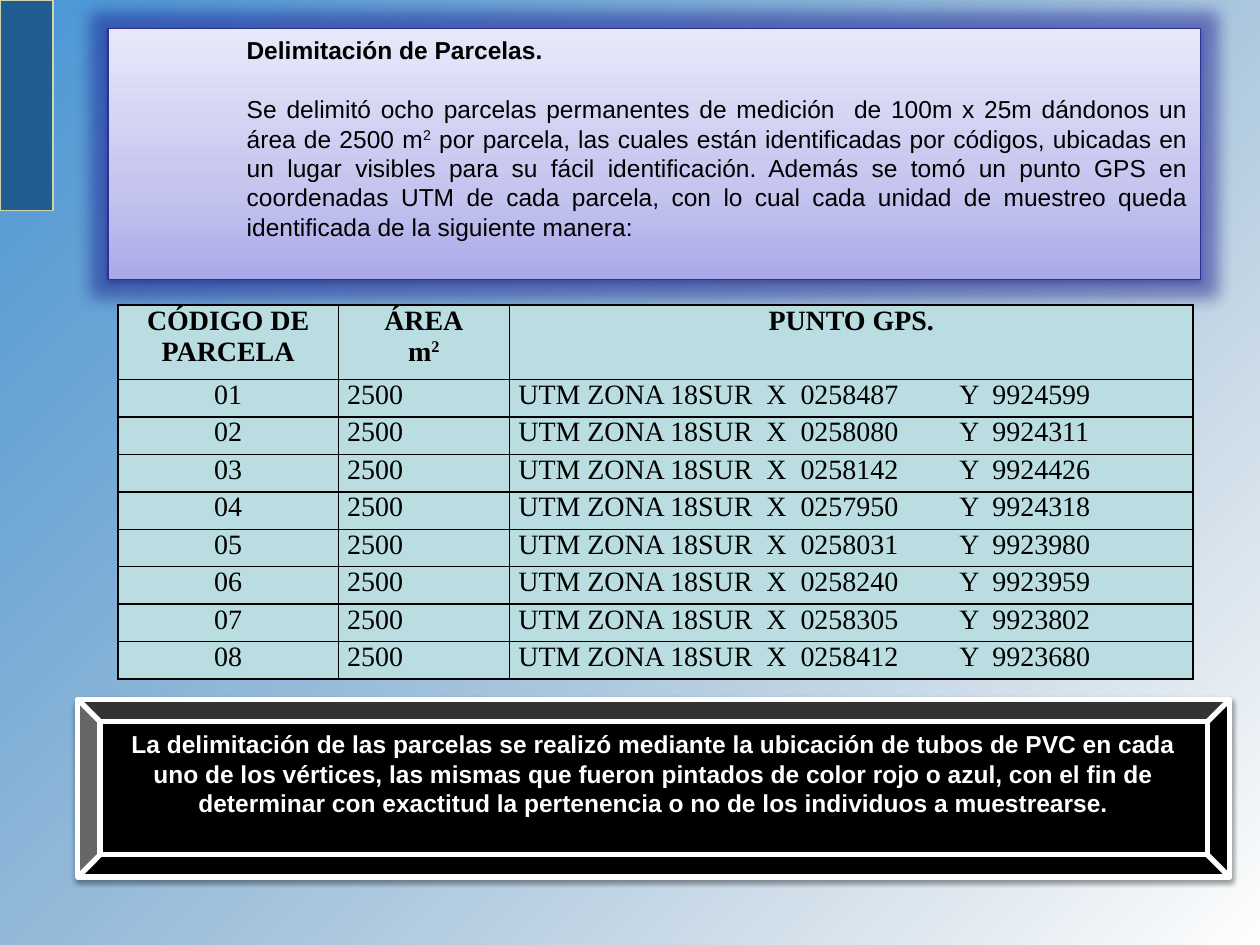
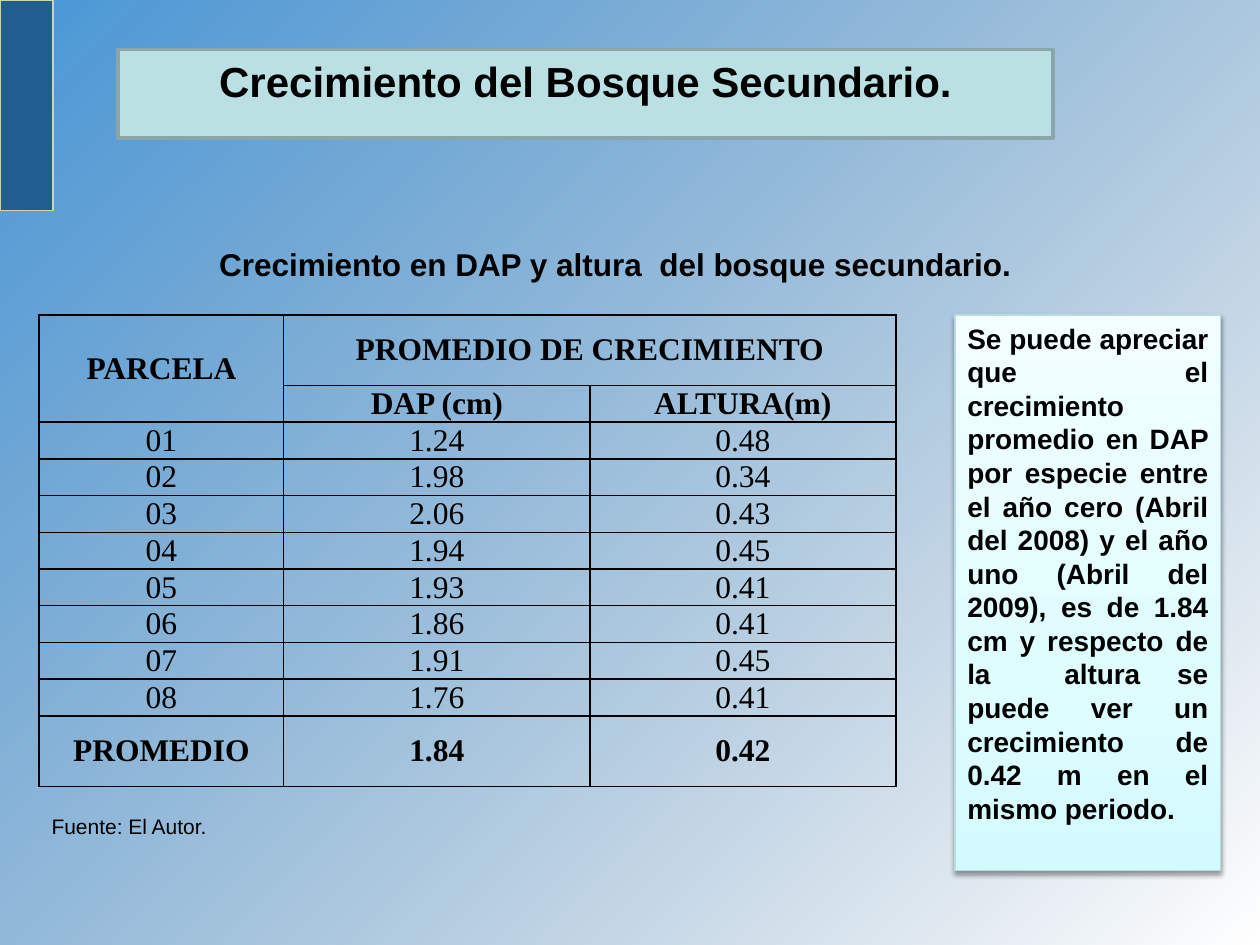
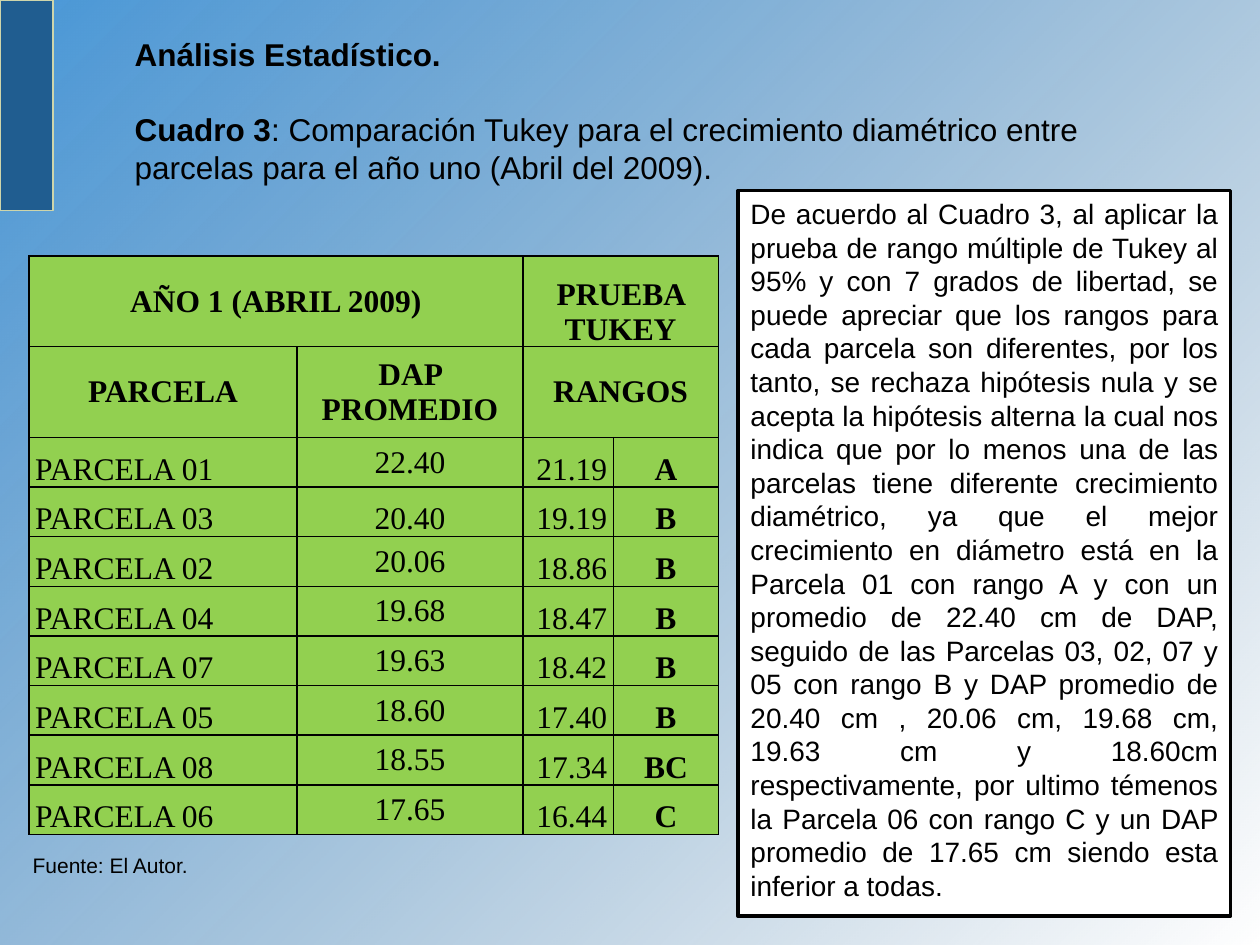
import dataclasses
import typing

import lxml.etree
import pptx
import pptx.dml.color
import pptx.enum.shapes
import pptx.enum.text
import pptx.oxml
import pptx.oxml.ns
import pptx.util

Cm = pptx.util.Cm
Pt = pptx.util.Pt
RGBColor = pptx.dml.color.RGBColor
Align = pptx.enum.text.PP_ALIGN
Anchor = pptx.enum.text.MSO_ANCHOR
Form = pptx.enum.shapes.MSO_SHAPE

BLACK = RGBColor(0x00, 0x00, 0x00)
WHITE = RGBColor(0xFF, 0xFF, 0xFF)
SKY = RGBColor(0x49, 0x97, 0xD7)
DEEP = RGBColor(0x34, 0x6C, 0x9A)
BAND = RGBColor(0x20, 0x5D, 0x90)
SAND = RGBColor(0xCE, 0xD5, 0xAB)
NAVY = RGBColor(0x2F, 0x2F, 0x98)
HALO = RGBColor(0x1C, 0x1C, 0xB0)
LILAC = (
    (0, RGBColor(0xA9, 0xA9, 0xE9), 100),
    (35, RGBColor(0xC4, 0xC4, 0xEF), 100),
    (100, RGBColor(0xE8, 0xE8, 0xFA), 100),
)
ICE = (
    (0, RGBColor(0xD3, 0xFB, 0xFF), 100),
    (35, RGBColor(0xDF, 0xFC, 0xFF), 100),
    (100, RGBColor(0xF2, 0xFE, 0xFF), 100),
)
FADE = ((0, SKY, 100), (100, DEEP, 0))
FROST = RGBColor(0xB6, 0xDC, 0xDF)
AQUA = RGBColor(0xBB, 0xE0, 0xE3)
TEAL = RGBColor(0x8A, 0xA6, 0xA8)
PALE = RGBColor(0xBA, 0xDD, 0xE1)
GREEN = RGBColor(0x92, 0xD0, 0x50)
SANS = "Arial"
SERIF = "Times New Roman"


class Box(typing.NamedTuple):
    left: float
    top: float
    wide: float
    tall: float

    def sides(self) -> list:
        return [Cm(side) for side in self]


class Span(typing.NamedTuple):
    text: str
    bold: bool = False
    lift: bool = False


@dataclasses.dataclass(frozen=True)
class Style:
    size: int
    bold: bool = False
    align: Align = Align.LEFT
    color: RGBColor = BLACK
    font: str = SANS
    anchor: Anchor = Anchor.TOP
    tab: float = 0


@dataclasses.dataclass(frozen=True)
class Skin:
    fill: RGBColor | None = None
    stops: tuple = ()
    angle: int = 270
    edge: RGBColor | None = None
    width: float = 0.75
    shade: bool = False
    glow: bool = False


@dataclasses.dataclass(frozen=True)
class Grid:
    box: Box
    cols: list
    rows: list
    cells: list
    size: int
    heads: int
    aligns: list
    anchors: list
    inset: float
    fill: RGBColor | None = None
    joins: tuple = ()
    bold_rows: tuple = ()
    bold_cols: tuple = ()
    tab: float = 0


def node(parent, tag: str, **attrs):
    made = lxml.etree.SubElement(parent, pptx.oxml.ns.qn(tag))
    for key, value in attrs.items():
        made.set(key, str(value))
    return made


def tint(parent, color: RGBColor, alpha: int) -> None:
    node(node(parent, "a:srgbClr", val=color), "a:alpha", val=alpha * 1000)


def blend(shape, stops: tuple, angle: int) -> None:
    shape.fill.background()
    props = shape.element.spPr
    blank = props.find(pptx.oxml.ns.qn("a:noFill"))
    grad = node(props, "a:gradFill", rotWithShape=1)
    steps = node(grad, "a:gsLst")
    for place, color, alpha in stops:
        tint(node(steps, "a:gs", pos=place * 1000), color, alpha)
    node(grad, "a:lin", ang=angle * 60000, scaled=0)
    props.replace(blank, grad)


def dress(shape, skin: Skin) -> None:
    if skin.stops:
        blend(shape, skin.stops, skin.angle)
    else:
        shape.fill.solid()
        shape.fill.fore_color.rgb = skin.fill
    if skin.edge is None:
        shape.line.fill.background()
    else:
        shape.line.color.rgb = skin.edge
        shape.line.width = Pt(skin.width)
    shape.shadow.inherit = False
    looks = shape.element.spPr.find(pptx.oxml.ns.qn("a:effectLst"))
    if skin.glow:
        tint(node(looks, "a:glow", rad=Pt(18)), HALO, 40)
    if skin.shade:
        drop = node(looks, "a:outerShdw", blurRad=Pt(3.1), dist=Pt(1.6),
                    dir=90 * 60000, rotWithShape=0)
        tint(drop, BLACK, 38)


def write(frame, lines: list, style: Style) -> None:
    frame.word_wrap = True
    for index, spans in enumerate(lines):
        par = frame.paragraphs[0] if index == 0 else frame.add_paragraph()
        props = par._p.get_or_add_pPr()
        props.set("marL", "0")
        props.set("indent", "0")
        node(props, "a:buNone")
        if style.tab:
            node(node(props, "a:tabLst"), "a:tab", pos=Cm(style.tab), algn="l")
        par.alignment = style.align
        par.space_before = Pt(0)
        par.text = spans[0].text
        for span in spans[1:]:
            par.add_run().text = span.text
        for run, span in zip(par.runs, spans):
            run.font.name = style.font
            run.font.size = Pt(style.size)
            run.font.bold = style.bold or span.bold
            run.font.color.rgb = style.color
            if span.lift:
                run._r.get_or_add_rPr().set("baseline", "30000")


def fill_text(shape, lines: list | str, style: Style) -> None:
    frame = shape.text_frame
    frame.auto_size = pptx.enum.text.MSO_AUTO_SIZE.NONE
    frame.vertical_anchor = style.anchor
    write(frame, [[Span(lines)]] if isinstance(lines, str) else lines, style)


def panel(slide, form: Form, box: Box, skin: Skin):
    shape = slide.shapes.add_shape(form, *box.sides())
    dress(shape, skin)
    return shape


def label(slide, box: Box, text: str, style: Style) -> None:
    fill_text(slide.shapes.add_textbox(*box.sides()), text, style)


def settle(holder, box: Box, form: str = ""):
    holder.left, holder.top, holder.width, holder.height = box.sides()
    if form:
        node(node(holder.element.spPr, "a:prstGeom", prst=form), "a:avLst")
    return holder


def frame_cell(cell) -> None:
    props = cell._tc.get_or_add_tcPr()
    for side in ("L", "R", "T", "B"):
        edge = node(props, f"a:ln{side}", w=Pt(1))
        tint(node(edge, "a:solidFill"), BLACK, 100)


def draw_grid(slide, grid: Grid):
    table = slide.shapes.add_table(
        len(grid.rows), len(grid.cols), *grid.box.sides()).table
    table.first_row = table.horz_banding = False
    for col, wide in zip(table.columns, grid.cols):
        col.width = Cm(wide)
    for row, tall in zip(table.rows, grid.rows):
        row.height = Cm(tall)
    for y, texts in enumerate(grid.cells):
        for x, text in enumerate(texts):
            cell = table.cell(y, x)
            head = y < grid.heads
            frame_cell(cell)
            if grid.fill is None:
                cell.fill.background()
            else:
                cell.fill.solid()
                cell.fill.fore_color.rgb = grid.fill
            cell.margin_left = cell.margin_right = Cm(grid.inset)
            cell.margin_top = cell.margin_bottom = 0
            middle = head and grid.anchors[x] != Anchor.TOP
            cell.vertical_anchor = Anchor.MIDDLE if middle else grid.anchors[x]
            style = Style(
                grid.size,
                bold=head or y in grid.bold_rows or x in grid.bold_cols,
                align=Align.CENTER if head else grid.aligns[x],
                font=SERIF,
                tab=0 if head else grid.tab)
            lines = [[Span(text)]] if isinstance(text, str) else text
            write(cell.text_frame, lines, style)
    for first, last in grid.joins:
        table.cell(*first).merge(table.cell(*last))
    return table


def set_master(deck, slide) -> None:
    back = panel(slide, Form.RECTANGLE, Box(0, 0, 25.4, 19.05),
                 Skin(stops=FADE, angle=45))
    band = panel(slide, Form.RECTANGLE, Box(0, 0, 1.07, 4.24),
                 Skin(fill=BAND, edge=SAND))
    tree = deck.slide_master.shapes.element
    for place, shape in enumerate((back, band), 2):
        tree.insert(place, shape.element)


SOURCE = "Fuente: El Autor."
SMALL = Style(12)
PLOTS = [f"{plot:02}" for plot in range(1, 9)]


def plots_slide(slide) -> None:
    title = settle(slide.shapes.title, Box(2.18, 0.58, 22.02, 5.05))
    dress(title, Skin(stops=LILAC, edge=NAVY, shade=True, glow=True))
    title.text_frame.margin_left = Cm(2.79)
    fill_text(title, "Delimitación de Parcelas.", Style(14, bold=True))
    body = settle(slide.placeholders[1], Box(4.72, 1.77, 19.48, 3.6))
    fill_text(body, [[
        Span("Se delimitó ocho parcelas permanentes de medición  de 100m x 25m "
             "dándonos un área de 2500 m"),
        Span("2", lift=True),
        Span(" por parcela, las cuales están identificadas por códigos, "
             "ubicadas en un lugar visibles para su fácil identificación. "
             "Además se tomó un punto GPS en coordenadas UTM de cada parcela, "
             "con lo cual cada unidad de muestreo queda identificada de la "
             "siguiente manera:"),
    ]], Style(14, align=Align.JUSTIFY))

    points = [
        ("0258487", "9924599"), ("0258080", "9924311"),
        ("0258142", "9924426"), ("0257950", "9924318"),
        ("0258031", "9923980"), ("0258240", "9923959"),
        ("0258305", "9923802"), ("0258412", "9923680"),
    ]
    area = [[Span("ÁREA")], [Span("m"), Span("2", lift=True)]]
    cells = [["CÓDIGO DE PARCELA", area, "PUNTO GPS."]]
    cells += [[plot, "2500", f"UTM ZONA 18SUR  X  {east}\tY  {north}"]
              for plot, (east, north) in zip(PLOTS, points)]
    draw_grid(slide, Grid(
        Box(2.38, 6.15, 21.67, 7.54), [4.44, 3.45, 13.78],
        [1.5] + [0.755] * 8, cells, size=16, heads=1,
        aligns=[Align.CENTER, Align.JUSTIFY, Align.JUSTIFY],
        anchors=[Anchor.TOP] * 3, inset=0.18, fill=PALE, tab=10.16))

    note = panel(slide, Form.BEVEL, Box(1.57, 14.1, 23.22, 3.58),
                 Skin(fill=BLACK, edge=WHITE, width=3, shade=True))
    note.text_frame.margin_bottom = Cm(0.72)
    fill_text(
        note,
        "La delimitación de las parcelas se realizó mediante la ubicación de "
        "tubos de PVC en cada uno de los vértices, las mismas que fueron "
        "pintados de color rojo o azul, con el fin de determinar con exactitud "
        "la pertenencia o no de los individuos a muestrearse.",
        Style(14, bold=True, align=Align.CENTER, color=WHITE,
              anchor=Anchor.MIDDLE))


def growth_slide(slide) -> None:
    title = settle(slide.shapes.title, Box(2.38, 1, 18.85, 1.78), "roundRect")
    dress(title, Skin(fill=AQUA, edge=TEAL, width=2))
    fill_text(title, "Crecimiento del Bosque Secundario.",
              Style(24, bold=True, align=Align.CENTER))
    label(slide, Box(4.17, 4.82, 18.06, 1),
          "Crecimiento en DAP y altura  del bosque secundario.",
          Style(18, bold=True, align=Align.JUSTIFY))

    widths = ["1.24", "1.98", "2.06", "1.94", "1.93", "1.86", "1.91", "1.76"]
    heights = ["0.48", "0.34", "0.43", "0.45", "0.41", "0.41", "0.45", "0.41"]
    cells = [["PARCELA", "PROMEDIO DE CRECIMIENTO", ""],
             ["", "DAP (cm)", "ALTURA(m)"],
             *zip(PLOTS, widths, heights),
             ["PROMEDIO", "1.84", "0.42"]]
    draw_grid(slide, Grid(
        Box(0.79, 6.35, 17.27, 9.5), [4.93, 6.17, 6.17],
        [1.42] + [0.74] * 9 + [1.42], cells, size=18, heads=2,
        aligns=[Align.CENTER] * 3, anchors=[Anchor.MIDDLE] * 3, inset=0.13,
        joins=(((0, 0), (1, 0)), ((0, 1), (0, 2))), bold_rows=(10,)))
    label(slide, Box(0.79, 16.28, 10.92, 0.77), SOURCE, SMALL)

    note = panel(slide, Form.RECTANGLE, Box(19.25, 6.35, 5.36, 11.2),
                 Skin(stops=ICE, edge=FROST, shade=True))
    fill_text(
        note,
        "Se puede apreciar que el crecimiento promedio en DAP por especie "
        "entre el año cero (Abril del 2008) y el año uno (Abril del 2009), es "
        "de 1.84 cm y respecto de la  altura se puede ver un crecimiento de "
        "0.42 m en el mismo periodo.",
        Style(16, bold=True, align=Align.JUSTIFY))


def tukey_slide(slide) -> None:
    title = settle(slide.shapes.title, Box(2.46, 0.58, 21.16, 1.2))
    fill_text(title, "Análisis Estadístico.", Style(18, bold=True))
    body = settle(slide.placeholders[1], Box(2.46, 2.1, 21.16, 2.2))
    fill_text(body, [[
        Span("Cuadro 3", bold=True),
        Span(": Comparación Tukey para el crecimiento diamétrico entre "
             "parcelas para el año uno (Abril del 2009)."),
    ]], Style(18))

    ranks = [
        ("01", "22.40", "21.19", "A"), ("03", "20.40", "19.19", "B"),
        ("02", "20.06", "18.86", "B"), ("04", "19.68", "18.47", "B"),
        ("07", "19.63", "18.42", "B"), ("05", "18.60", "17.40", "B"),
        ("08", "18.55", "17.34", "BC"), ("06", "17.65", "16.44", "C"),
    ]
    cells = [["AÑO 1 (ABRIL 2009)", "", "PRUEBA TUKEY", ""],
             ["PARCELA", "DAP PROMEDIO", "RANGOS", ""]]
    cells += [[f"PARCELA {plot}", *rest] for plot, *rest in ranks]
    table = draw_grid(slide, Grid(
        Box(0.58, 5.16, 13.9, 11.7), [5.41, 4.55, 1.83, 2.11],
        [1.83] * 2 + [1] * 8, cells, size=18, heads=2,
        aligns=[Align.JUSTIFY, Align.CENTER, Align.RIGHT, Align.CENTER],
        anchors=[Anchor.BOTTOM, Anchor.MIDDLE, Anchor.BOTTOM, Anchor.BOTTOM],
        inset=0.13, fill=GREEN, bold_cols=(3,),
        joins=(((0, 0), (0, 1)), ((0, 2), (0, 3)), ((1, 2), (1, 3)))))
    for spot in ((0, 2), (3, 1)):
        table.cell(*spot).vertical_anchor = Anchor.BOTTOM
    label(slide, Box(0.41, 17.07, 3.96, 1.27), SOURCE, SMALL)

    note = panel(slide, Form.RECTANGLE, Box(14.88, 3.84, 9.93, 14.63),
                 Skin(fill=WHITE, edge=BLACK, width=2))
    fill_text(
        note,
        "De acuerdo al Cuadro 3, al aplicar la prueba de rango múltiple de "
        "Tukey al 95% y con 7 grados de libertad, se puede apreciar que los "
        "rangos para cada parcela son diferentes, por los tanto, se rechaza "
        "hipótesis nula y se acepta la hipótesis alterna la cual nos indica "
        "que por lo menos una de las parcelas tiene diferente crecimiento "
        "diamétrico, ya que el mejor crecimiento en diámetro está en la "
        "Parcela 01 con rango A y con un promedio de 22.40 cm de DAP, seguido "
        "de las Parcelas 03, 02, 07 y 05 con rango B y DAP promedio de "
        "20.40 cm , 20.06 cm, 19.68 cm, 19.63 cm y 18.60cm respectivamente, "
        "por ultimo témenos la Parcela 06 con rango C y un DAP promedio de "
        "17.65 cm siendo esta inferior a todas.",
        Style(16, align=Align.JUSTIFY))


def main() -> None:
    deck = pptx.Presentation()
    deck.slide_width, deck.slide_height = Cm(25.4), Cm(19.05)
    full, plain = deck.slide_layouts[1], deck.slide_layouts[5]
    pages = ((full, plots_slide), (plain, growth_slide), (full, tukey_slide))
    for index, (layout, build) in enumerate(pages):
        slide = deck.slides.add_slide(layout)
        if index == 0:
            set_master(deck, slide)
        build(slide)
    deck.save("out.pptx")


if __name__ == "__main__":
    main()
